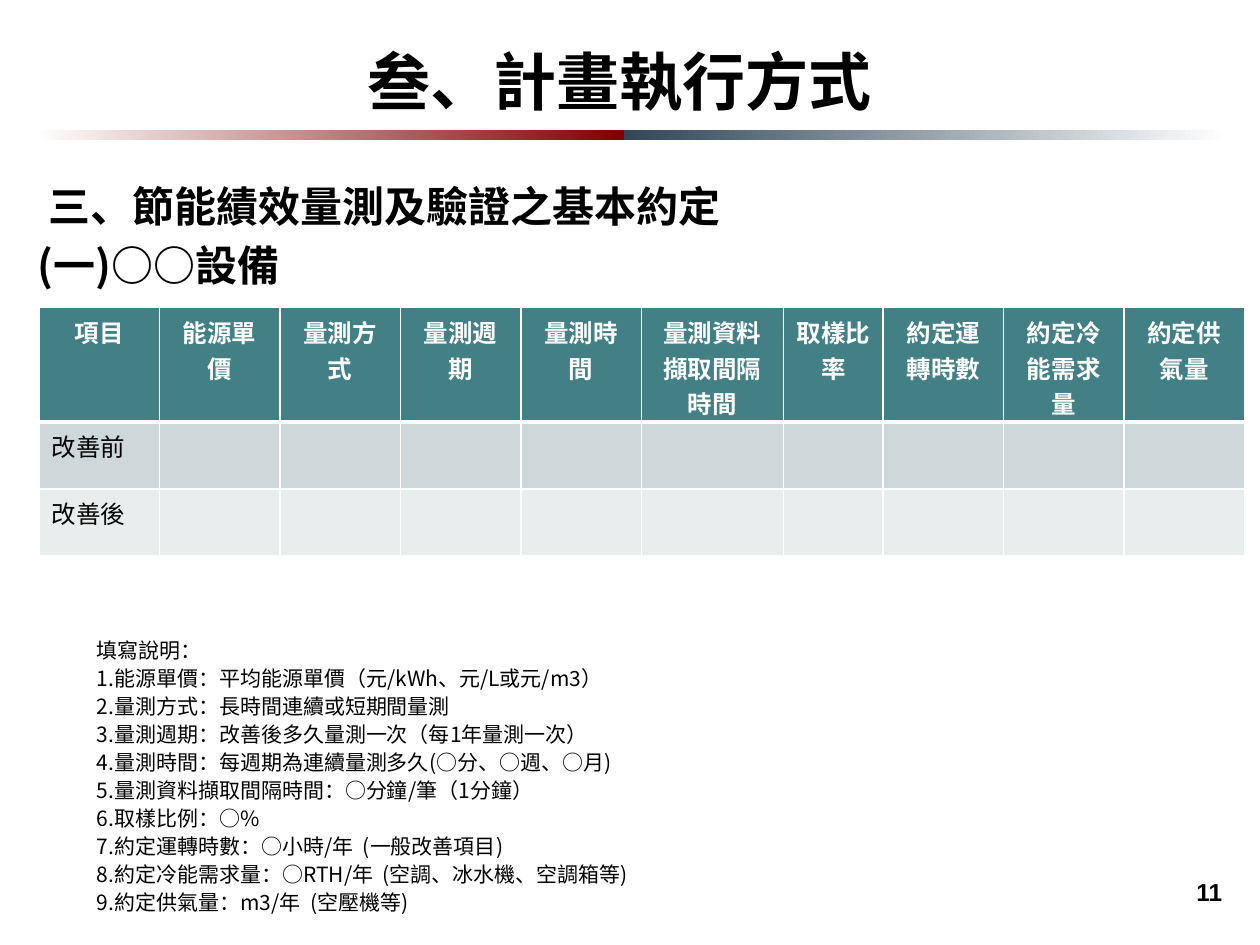
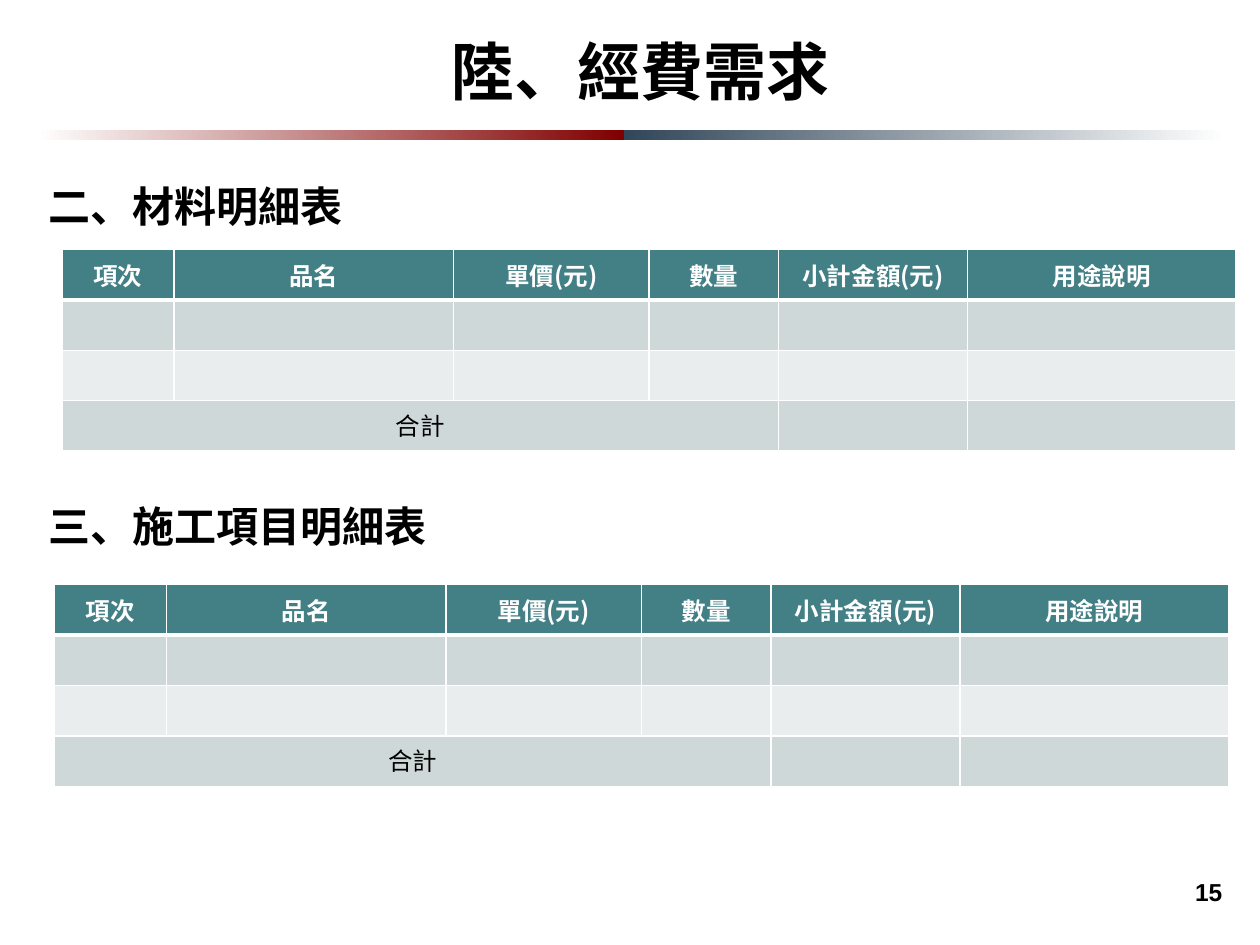
from lxml import etree
from pptx import Presentation
from pptx import util as u
from pptx.dml import color
from pptx.enum import shapes, text
from pptx.oxml import ns

CJK, LATIN = "Noto Sans CJK SC", "Arial"
BLACK, WHITE = "000000", "FFFFFF"
RED, NAVY = "800000", "314659"
HEADER_FILL, BAND_FILLS = "438086", ("CFD8D9", "E9EDED")
CENTER, RIGHT = text.PP_ALIGN.CENTER, text.PP_ALIGN.RIGHT
TOP, MIDDLE = text.MSO_ANCHOR.TOP, text.MSO_ANCHOR.MIDDLE

AGREEMENT_HEADERS = ["項目", "能源單價", "量測方式", "量測週期", "量測時間",
                     "量測資料擷取間隔時間", "取樣比率", "約定運轉時數",
                     "約定冷能需求量", "約定供氣量"]
NOTES = ["填寫說明：",
         "1.能源單價：平均能源單價（元/kWh、元/L或元/m3）",
         "2.量測方式：長時間連續或短期間量測",
         "3.量測週期：改善後多久量測一次（每1年量測一次）",
         "4.量測時間：每週期為連續量測多久(○分、○週、○月)",
         "5.量測資料擷取間隔時間：○分鐘/筆（1分鐘）",
         "6.取樣比例：○%",
         "7.約定運轉時數：○小時/年  (一般改善項目)",
         "8.約定冷能需求量：○RTH/年  (空調、冰水機、空調箱等)",
         "9.約定供氣量：m3/年  (空壓機等)"]
COST_HEADERS = ["項次", "品名", "單價(元)", "數量", "小計金額(元)", "用途說明"]
COST_WIDTHS = [0.89, 2.22, 1.55, 1.03, 1.5, 2.13]


def rgb(value):
    return color.RGBColor.from_string(value)


def style(para, size, ink=BLACK, bold=False, align=None, face=CJK):
    """Set the paragraph's font, for Latin and East Asian letters alike."""
    para.alignment = align
    font = para.font
    font.size, font.bold, font.name = u.Pt(size), bold, face
    font.color.rgb = rgb(ink)
    defaults = para._p.get_or_add_pPr().find(ns.qn("a:defRPr"))
    etree.SubElement(defaults, ns.qn("a:ea"), typeface=face)


def add_text(page, box, lines, size, wrap=True, grow=True, spacing=None, **look):
    shape = page.shapes.add_textbox(*map(u.Inches, box))
    frame = shape.text_frame
    frame.word_wrap = wrap
    frame.auto_size = (text.MSO_AUTO_SIZE.SHAPE_TO_FIT_TEXT if grow
                       else text.MSO_AUTO_SIZE.NONE)
    frame.text = "\n".join(lines)
    for para in frame.paragraphs:
        style(para, size, **look)
        para.line_spacing = spacing
    return frame


def add_band(page, box, start, end):
    band = page.shapes.add_shape(shapes.MSO_SHAPE.RECTANGLE, *map(u.Inches, box))
    band.shadow.inherit = False
    band.line.fill.background()
    band.fill.gradient()
    band.fill.gradient_angle = 0
    for stop, value in zip(band.fill.gradient_stops, (start, end)):
        stop.color.rgb = rgb(value)


def add_page(deck, title, title_box, number):
    """Add a page with the title, the two-part band and the page number."""
    page = deck.slides.add_slide(deck.slide_layouts[6])
    add_band(page, (0.29, 1.03, 4.66, 0.08), WHITE, RED)
    add_band(page, (4.95, 1.03, 4.78, 0.08), NAVY, WHITE)
    footer = add_text(page, (7.72, 6.83, 2.08, 0.5), [str(number)], 14,
                      grow=False, bold=True, align=RIGHT, face=LATIN)
    footer.vertical_anchor = MIDDLE
    add_text(page, title_box, [title], 36, wrap=False, bold=True, align=CENTER)
    return page


def add_heading(page, top, words):
    frame = add_text(page, (0, top, 9, 0.71), [words], 24, spacing=1.5, bold=True)
    para = frame.paragraphs[0]
    para.space_before = para.space_after = u.Pt(6)
    indent = para._p.get_or_add_pPr()
    indent.set("marL", "0")
    indent.set("indent", str(u.Inches(0.29)))


def set_borders(cell, top, bottom):
    """Draw white borders; top and bottom are widths in points."""
    properties = cell._tc.get_or_add_tcPr()
    for side, width in (("L", 1), ("R", 1), ("T", top), ("B", bottom)):
        line = etree.SubElement(properties, ns.qn(f"a:ln{side}"), w=str(u.Pt(width)))
        fill = etree.SubElement(line, ns.qn("a:solidFill"))
        etree.SubElement(fill, ns.qn("a:srgbClr"), val=WHITE)


def add_banded_table(page, left, top, widths, heights, rows, header_anchor):
    """Add a table whose first row is the header; returns the table."""
    table = page.shapes.add_table(
        len(rows), len(widths), u.Inches(left), u.Inches(top),
        u.Inches(sum(widths)), u.Inches(sum(heights))).table
    for column, width in zip(table.columns, widths):
        column.width = u.Inches(width)
    for r, (height, words) in enumerate(zip(heights, rows)):
        table.rows[r].height = u.Inches(height)
        header = r == 0
        for c, word in enumerate(words):
            cell = table.cell(r, c)
            cell.text = word
            set_borders(cell, 3 if r == 1 else 1, 3 if header else 1)
            cell.fill.solid()
            cell.fill.fore_color.rgb = rgb(
                HEADER_FILL if header else BAND_FILLS[(r - 1) % 2])
            cell.vertical_anchor = header_anchor if header else TOP
            style(cell.text_frame.paragraphs[0], 14, WHITE if header else BLACK,
                  header, CENTER if header else None)
    return table


def add_cost_table(page, left, top):
    blank = [""] * len(COST_HEADERS)
    rows = [COST_HEADERS, blank, blank, ["合計"] + blank[1:]]
    table = add_banded_table(page, left, top, COST_WIDTHS, [0.4] * 4, rows, MIDDLE)
    total = table.cell(3, 0)
    total.merge(table.cell(3, 3))
    total.text_frame.paragraphs[0].alignment = CENTER


def add_agreement_page(deck):
    page = add_page(deck, "叁、計畫執行方式", (2.8, 0.29, 4.24, 0.71), 11)
    add_heading(page, 1.18, "三、節能績效量測及驗證之基本約定")
    add_text(page, (0.67, 4.99, 9.14, 2.34), NOTES, 12, spacing=u.Pt(16))
    add_text(page, (0.2, 1.97, 9.21, 0.39), ["(一)○○設備"], 24,
             spacing=u.Pt(20), bold=True)
    interval, rate = 1.13, 0.79
    usual = (9.57 - interval - rate) / 8
    widths = [usual] * 5 + [interval, rate] + [usual] * 3
    blank = [""] * (len(widths) - 1)
    rows = [AGREEMENT_HEADERS, ["改善前"] + blank, ["改善後"] + blank]
    add_banded_table(page, 0.31, 2.44, widths, [0.91, 0.53, 0.53], rows, TOP)


def add_cost_page(deck):
    page = add_page(deck, "陸、經費需求", (3.47, 0.21, 3.23, 0.71), 15)
    add_heading(page, 1.18, "二、材料明細表")
    add_cost_table(page, 0.49, 1.98)
    add_heading(page, 3.72, "三、施工項目明細表")
    add_cost_table(page, 0.43, 4.64)


def main():
    deck = Presentation()
    deck.slide_width, deck.slide_height = u.Inches(10), u.Inches(7.5)
    add_agreement_page(deck)
    add_cost_page(deck)
    deck.save("out.pptx")


if __name__ == "__main__":
    main()
